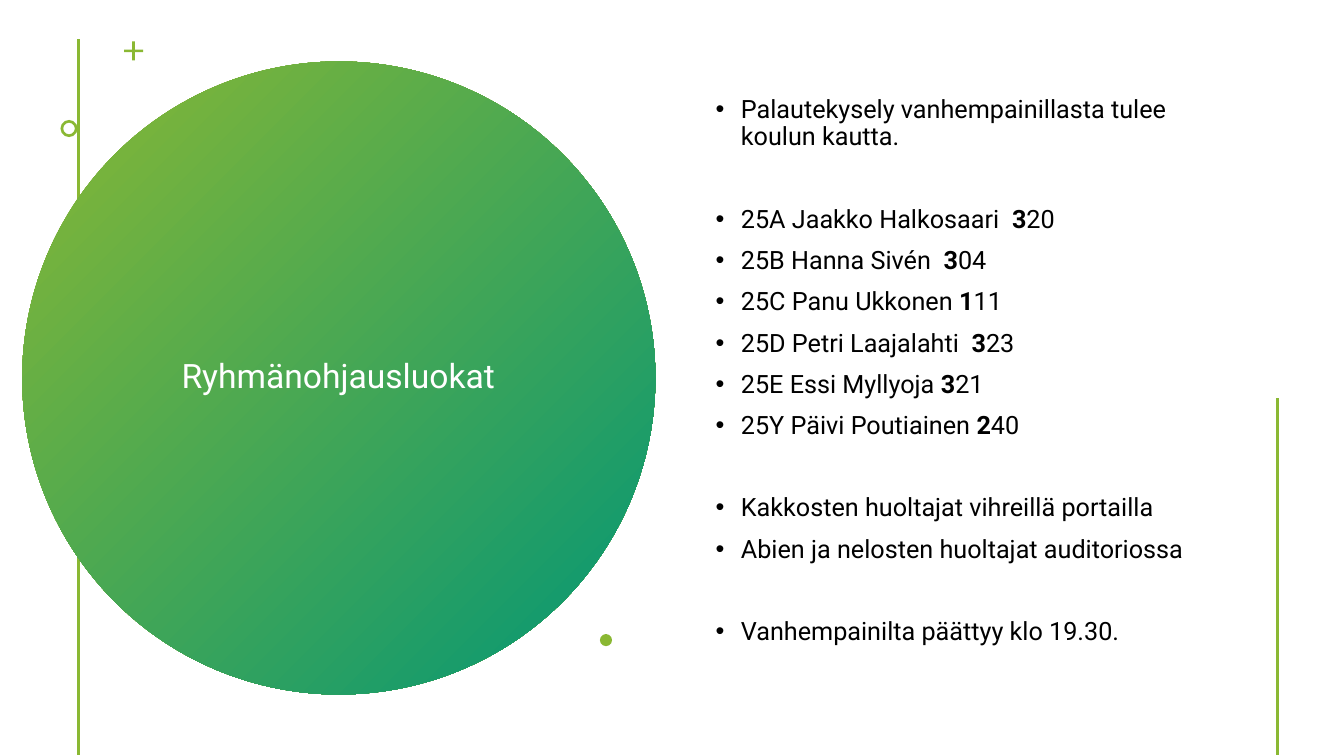
import pptx
import pptx.util
import pptx.dml.color
import pptx.enum.shapes
import pptx.enum.text
import pptx.oxml
import pptx.oxml.ns
from pptx.util import Inches, Pt

LIME = pptx.dml.color.RGBColor(0x8A, 0xB8, 0x33)
TEAL = pptx.dml.color.RGBColor(0x02, 0x96, 0x76)
WHITE = pptx.dml.color.RGBColor(0xFF, 0xFF, 0xFF)
BLACK = pptx.dml.color.RGBColor(0x00, 0x00, 0x00)

HEADING = "Ryhmänohjausluokat"
SECTIONS = [
    [("Palautekysely vanhempainillasta tulee koulun kautta.", "")],
    [
        ("25A Jaakko Halkosaari  ", "320"),
        ("25B Hanna Sivén  ", "304"),
        ("25C Panu Ukkonen ", "111"),
        ("25D Petri Laajalahti  ", "323"),
        ("25E Essi Myllyoja ", "321"),
        ("25Y Päivi Poutiainen ", "240"),
    ],
    [
        ("Kakkosten huoltajat vihreillä portailla", ""),
        ("Abien ja nelosten huoltajat auditoriossa", ""),
    ],
    [("Vanhempainilta päättyy klo 19.30.", "")],
]
RULES = [(0.78, 0.39), (12.67, 3.95)]
RULE_BOTTOM = 7.49
SHAPES = pptx.enum.shapes.MSO_SHAPE
ORNAMENTS = [
    (SHAPES.CROSS, 1.23, 0.41, 0.19, 0.43),
    (SHAPES.DONUT, 0.6, 1.19, 0.17, 0.16),
    (SHAPES.OVAL, 5.95, 6.29, 0.12, None),
]
ITEM_SPACE = 10
SECTION_SPACE = 39.4


def add_text(paragraph, text, size=18, color=BLACK, bold=False):
    """Append a formatted run to a paragraph."""
    run = paragraph.add_run()
    run.text = text
    run.font.name = "Roboto"
    run.font.size = Pt(size)
    run.font.bold = bold
    run.font.color.rgb = color


def add_bullet(paragraph):
    """Give a paragraph a hanging round bullet."""
    properties = paragraph._p.get_or_add_pPr()
    properties.set("marL", str(Inches(0.25)))
    properties.set("indent", str(-Inches(0.25)))
    for tag, name, value in (("a:buFont", "typeface", "Arial"), ("a:buChar", "char", "•")):
        bullet = pptx.oxml.parse_xml(f"<{tag} {pptx.oxml.ns.nsdecls('a')} {name}='{value}'/>")
        properties.append(bullet)


def add_rule(slide, x, top):
    """Draw a vertical rule running to the foot of the slide."""
    rule = slide.shapes.add_connector(
        pptx.enum.shapes.MSO_CONNECTOR.STRAIGHT,
        Inches(x), Inches(top), Inches(x), Inches(RULE_BOTTOM))
    rule.line.color.rgb = LIME
    rule.line.width = Pt(2)
    rule.element.spPr.append(
        pptx.oxml.parse_xml(f"<a:effectLst {pptx.oxml.ns.nsdecls('a')}/>"))


def add_round(slide, kind, left, top, size):
    """Add an unoutlined shape of equal width and height."""
    shape = slide.shapes.add_shape(
        kind, Inches(left), Inches(top), Inches(size), Inches(size))
    shape.shadow.inherit = False
    shape.line.fill.background()
    return shape


def place_frame(shape, left, top, width, height):
    """Position a text shape and centre its text vertically."""
    shape.left, shape.top = Inches(left), Inches(top)
    shape.width, shape.height = Inches(width), Inches(height)
    frame = shape.text_frame
    frame.word_wrap = True
    frame.auto_size = pptx.enum.text.MSO_AUTO_SIZE.NONE
    frame.vertical_anchor = pptx.enum.text.MSO_ANCHOR.MIDDLE
    return frame


def add_heading(slide, circle):
    """Set the title in front of the circle."""
    title = slide.shapes.title
    heading = place_frame(title, 1.36, 1.41, 3.99, 4.67).paragraphs[0]
    heading.alignment = pptx.enum.text.PP_ALIGN.CENTER
    heading.line_spacing = 0.9
    add_text(heading, HEADING, size=24, color=WHITE)
    circle.element.addnext(title.element)


def add_sections(slide):
    """Write the bulleted sections with wider gaps between them."""
    box = slide.shapes.add_textbox(0, 0, 0, 0)
    frame = place_frame(box, 7, 0.42, 5.12, 6.53)
    item = frame.paragraphs[0]
    for section_index, section in enumerate(SECTIONS):
        for item_index, (label, room) in enumerate(section):
            if section_index or item_index:
                item = frame.add_paragraph()
            opens_section = section_index and not item_index
            item.line_spacing = 0.9
            item.space_before = Pt(SECTION_SPACE if opens_section else ITEM_SPACE)
            add_bullet(item)
            add_text(item, label)
            if room:
                add_text(item, room[0], bold=True)
                add_text(item, room[1:])


def main():
    """Build the slide and save it."""
    deck = pptx.Presentation()
    deck.slide_width, deck.slide_height = Inches(13.33), Inches(7.5)
    slide = deck.slides.add_slide(deck.slide_layouts[5])

    left_rule, right_rule = RULES
    add_rule(slide, *left_rule)
    circle = add_round(slide, SHAPES.OVAL, 0.22, 0.61, 6.28)
    circle.fill.gradient()
    circle.fill.gradient_angle = 315
    for stop, color in zip(circle.fill.gradient_stops, (LIME, TEAL)):
        stop.color.rgb = color
    add_heading(slide, circle)

    for kind, left, top, size, thickness in ORNAMENTS:
        ornament = add_round(slide, kind, left, top, size)
        ornament.fill.solid()
        ornament.fill.fore_color.rgb = LIME
        if thickness:
            ornament.adjustments[0] = thickness

    add_sections(slide)
    add_rule(slide, *right_rule)
    deck.save("out.pptx")


if __name__ == "__main__":
    main()
